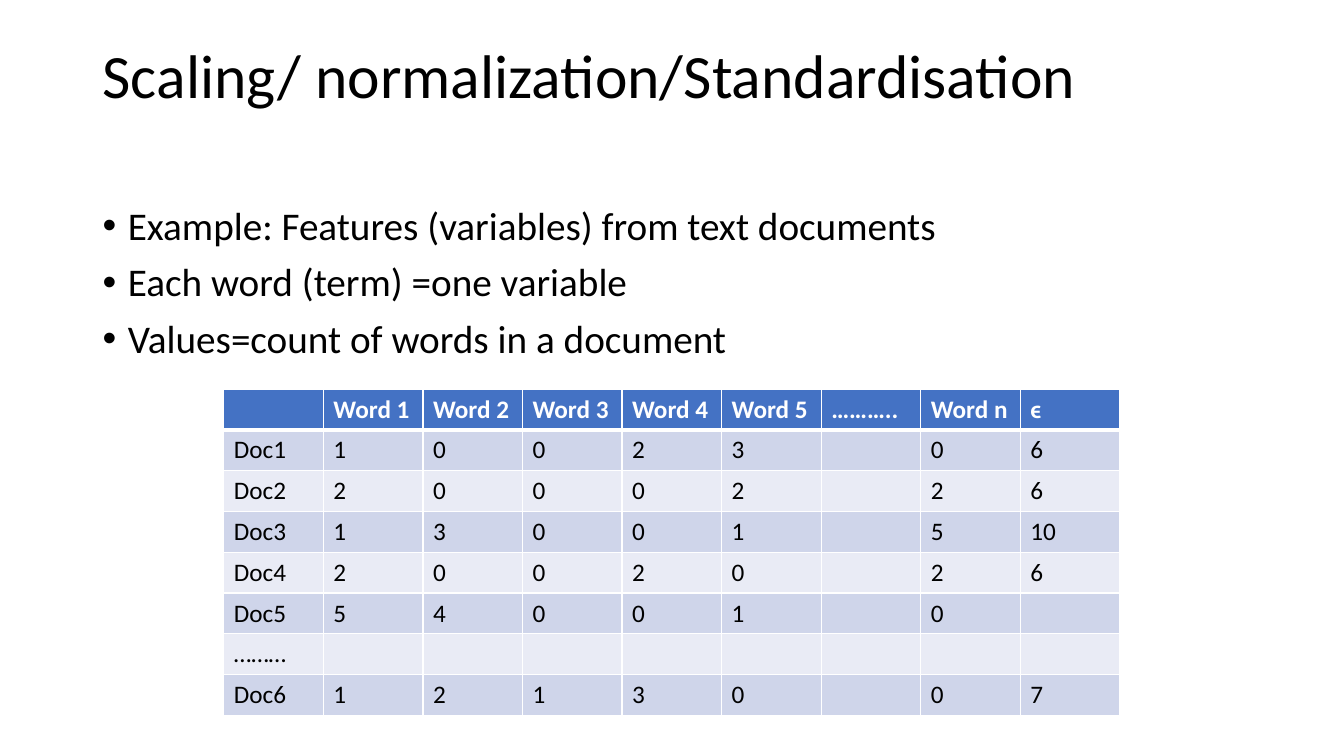
from lxml import etree
from pptx import Presentation
from pptx.dml.color import RGBColor
from pptx.enum.text import MSO_ANCHOR
from pptx.oxml.ns import qn
from pptx.util import Inches, Pt

TITLE = "Scaling/ normalization/Standardisation"
POINTS = [
    "Example: Features (variables) from text documents",
    "Each word (term) =one variable",
    "Values=count of words in a document",
]
ROWS = [
    ["", "Word 1", "Word 2", "Word 3", "Word 4", "Word 5", "………..", "Word n", "ϵ"],
    ["Doc1", "1", "0", "0", "2", "3", "", "0", "6"],
    ["Doc2", "2", "0", "0", "0", "2", "", "2", "6"],
    ["Doc3", "1", "3", "0", "0", "1", "", "5", "10"],
    ["Doc4", "2", "0", "0", "2", "0", "", "2", "6"],
    ["Doc5", "5", "4", "0", "0", "1", "", "0", ""],
    ["………", "", "", "", "", "", "", "", ""],
    ["Doc6", "1", "2", "1", "3", "0", "", "0", "7"],
]

FONT = "Calibri"
BLACK = RGBColor(0x00, 0x00, 0x00)
WHITE = RGBColor(0xFF, 0xFF, 0xFF)
BLUE = RGBColor(0x44, 0x72, 0xC4)
BANDS = [RGBColor(0xE9, 0xEB, 0xF5), RGBColor(0xCF, 0xD5, 0xEA)]
TOP = MSO_ANCHOR.TOP


def style(para, size, color=BLACK, bold=False):
    font = para.font
    font.name, font.size, font.bold = FONT, Pt(size), bold
    font.color.rgb = color


def add_text(slide, top, height, lines, size, bullet=False):
    box = slide.shapes.add_textbox(
        Inches(0.92), Inches(top), Inches(11.5), Inches(height))
    frame = box.text_frame
    frame.word_wrap = True
    frame.vertical_anchor = TOP
    for i, line in enumerate(lines):
        para = frame.paragraphs[0] if i == 0 else frame.add_paragraph()
        para.text = line
        para.line_spacing = 0.9
        if i:
            para.space_before = Pt(10)
        if bullet:
            props = para._p.get_or_add_pPr()
            props.set("marL", str(Inches(0.25)))
            props.set("indent", str(-Inches(0.25)))
            etree.SubElement(props, qn("a:buFont"), typeface="Arial")
            etree.SubElement(props, qn("a:buChar"), char="•")
        style(para, size)


def add_edges(cell, row):
    """Draw white cell borders, thick between the header and the body."""
    widths = {"L": 1, "R": 1, "T": 3 if row == 1 else 1, "B": 3 if row == 0 else 1}
    props = cell._tc.get_or_add_tcPr()
    for side, width in widths.items():
        line = etree.SubElement(props, qn("a:ln" + side), w=str(Pt(width)))
        fill = etree.SubElement(line, qn("a:solidFill"))
        etree.SubElement(fill, qn("a:srgbClr"), val=str(WHITE))


def add_counts(slide):
    width, height = Inches(8.89), Inches(3.24)
    table = slide.shapes.add_table(
        len(ROWS), len(ROWS[0]), Inches(2.22), Inches(3.86), width, height).table
    for r, values in enumerate(ROWS):
        head = r == 0
        for c, value in enumerate(values):
            cell = table.cell(r, c)
            add_edges(cell, r)
            cell.fill.solid()
            cell.fill.fore_color.rgb = BLUE if head else BANDS[r % 2]
            cell.text = value
            style(cell.text_frame.paragraphs[0], 18, WHITE if head else BLACK, head)


def main():
    deck = Presentation()
    deck.slide_width, deck.slide_height = Inches(13.33), Inches(7.5)
    slide = deck.slides.add_slide(deck.slide_layouts[6])
    add_text(slide, 0.4, 1.45, [TITLE], 44)
    add_text(slide, 2, 4.76, POINTS, 28, bullet=True)
    add_counts(slide)
    deck.save("out.pptx")


if __name__ == "__main__":
    main()
